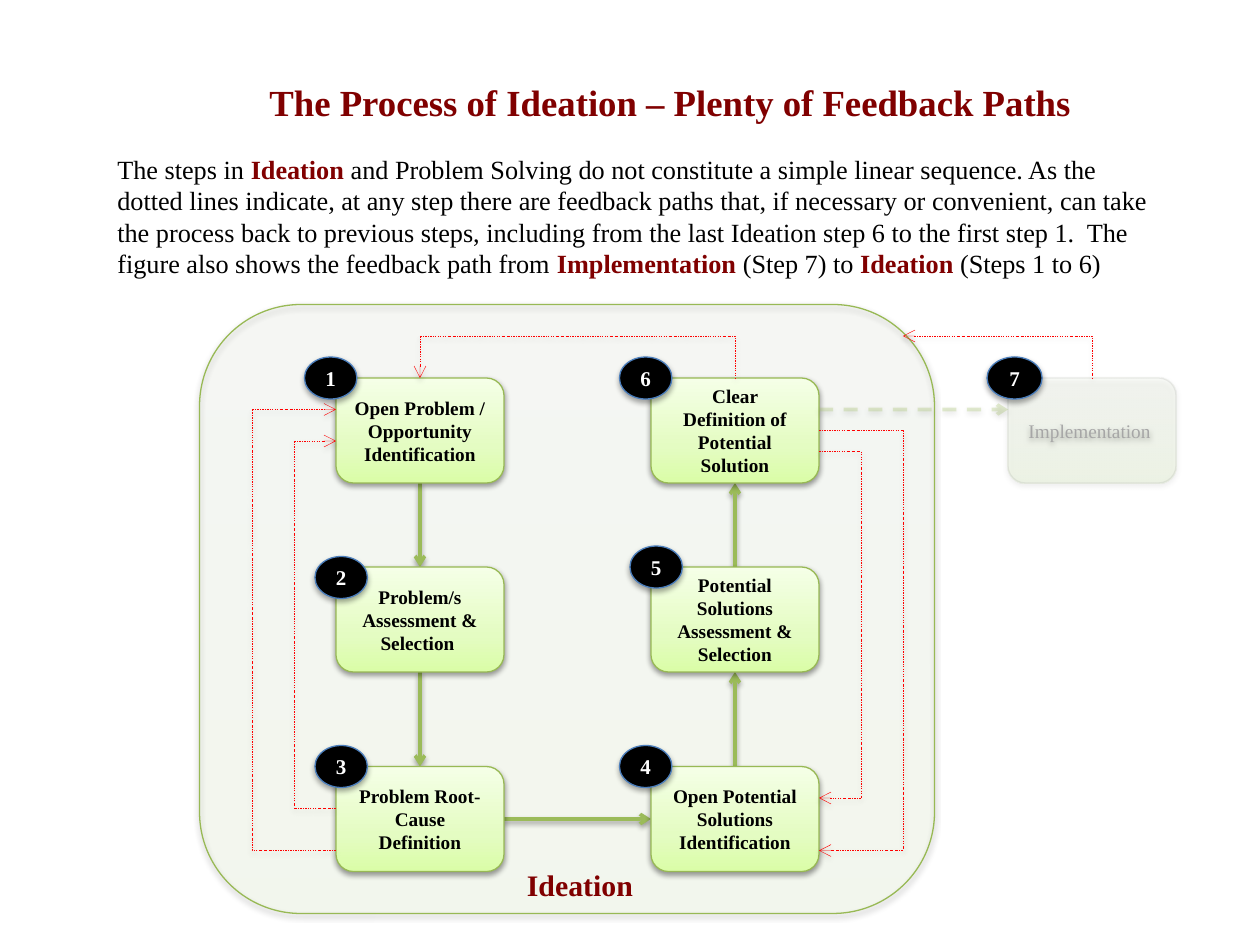
from collections import namedtuple

from lxml import etree
from pptx import Presentation
from pptx.dml.color import RGBColor
from pptx.enum.dml import MSO_LINE
from pptx.enum.shapes import MSO_CONNECTOR, MSO_SHAPE
from pptx.enum.text import MSO_ANCHOR, PP_ALIGN
from pptx.oxml import parse_xml
from pptx.oxml.ns import nsdecls, qn
from pptx.util import Cm, Pt

ROUNDED, OVAL = MSO_SHAPE.ROUNDED_RECTANGLE, MSO_SHAPE.OVAL
STRAIGHT, ELBOW = MSO_CONNECTOR.STRAIGHT, MSO_CONNECTOR.ELBOW
DASH, DASH_DOT = MSO_LINE.DASH, MSO_LINE.DASH_DOT
CENTER, LEFT = PP_ALIGN.CENTER, PP_ALIGN.LEFT

BLACK = RGBColor(0x00, 0x00, 0x00)
WHITE = RGBColor(0xFF, 0xFF, 0xFF)
MAROON = RGBColor(0x80, 0x00, 0x00)
RED = RGBColor(0xFF, 0x00, 0x00)
GREEN = RGBColor(0x9B, 0xBB, 0x59)
GREEN_EDGE = RGBColor(0x98, 0xB9, 0x55)
BLUE_EDGE = RGBColor(0x4B, 0x7E, 0xBC)
GRAY_EDGE = RGBColor(0x80, 0x80, 0x80)
GRAY_TEXT = RGBColor(0xA6, 0xA6, 0xA6)
GRADIENT = [(0, RGBColor(0xDA, 0xFD, 0xA7)),
            (35, RGBColor(0xE4, 0xFC, 0xC2)),
            (100, RGBColor(0xF5, 0xFF, 0xE7))]

FONT = "Times New Roman"
CELL = 2.54 / 12  # the layout grid, twelve cells to the inch
Box = namedtuple("Box", "left top width height")
STEP_WIDTH, STEP_HEIGHT = 16, 10

# Number, text, place in the Ideation box, offset of the badge
STEPS = [
    ("1", "Open Problem / Opportunity Identification", (13, 7), (-3, -2)),
    ("2", "Problem/s Assessment & Selection ", (13, 25), (-2, -1)),
    ("3", "Problem Root-Cause Definition", (13, 44), (-2, -2)),
    ("4", "Open Potential Solutions Identification", (43, 44), (-3, -2)),
    ("5", "Potential Solutions Assessment & Selection", (43, 25), (-2, -2)),
    ("6", "Clear Definition of Potential Solution", (43, 7), (-3, -2)),
]
FORWARD = [((21, 17), (21, 25)), ((21, 35), (21, 44)), ((29, 49), (43, 49)),
           ((51, 44), (51, 35)), ((51, 25), (51, 17))]
# Start and end of the bent part, then start and tip of the arrow
FEEDBACK = [((13, 52), (5, 10), (5, 10), (13, 10)),
            ((13, 48), (9, 13), (9, 13), (13, 13)),
            ((59, 12), (67, 52), (67, 52), (59, 52)),
            ((59, 14), (63, 47), (63, 47), (59, 47)),
            ((21, 3), (51, 7), (21, 3), (21, 7))]


def grid(*cells):
    return [Cm(cell * CELL) for cell in cells]


def inside(box, point):
    return box.left + point[0], box.top + point[1]


def add_effects(shape, opacity=38, distance=20000):
    shape._element.spPr.append(parse_xml(
        f'<a:effectLst {nsdecls("a")}><a:outerShdw blurRad="40000" dist="{distance}" '
        'dir="5400000" rotWithShape="0"><a:srgbClr val="000000">'
        f'<a:alpha val="{opacity * 1000}"/></a:srgbClr></a:outerShdw></a:effectLst>'))


def set_line(shape, color, width, dash=None, opacity=100):
    shape.line.color.rgb = color
    shape.line.width = Pt(width)
    if dash:
        shape.line.dash_style = dash
    if opacity < 100:
        color_element = shape._element.spPr.find(".//" + qn("a:ln")).find(".//" + qn("a:srgbClr"))
        etree.SubElement(color_element, qn("a:alpha"), val=str(opacity * 1000))


def set_gradient(shape, opacity):
    stops = "".join(
        f'<a:gs pos="{position * 1000}"><a:srgbClr val="{color}">'
        f'<a:alpha val="{opacity * 1000}"/></a:srgbClr></a:gs>' for position, color in GRADIENT)
    shape._element.spPr.find(qn("a:prstGeom")).addnext(parse_xml(
        f'<a:gradFill {nsdecls("a")} rotWithShape="1"><a:gsLst>{stops}</a:gsLst>'
        '<a:lin ang="16200000" scaled="0"/></a:gradFill>'))


def add_run(paragraph, text, size, color, bold):
    run = paragraph.add_run()
    run.text = text
    run.font.name = FONT
    run.font.size = Pt(size)
    run.font.bold = bold
    run.font.color.rgb = color


def write_centered(shape, text, size, color, bold=True):
    frame = shape.text_frame
    frame.word_wrap = True
    frame.vertical_anchor = MSO_ANCHOR.MIDDLE
    frame.paragraphs[0].alignment = CENTER
    add_run(frame.paragraphs[0], text, size, color, bold)


def add_panel(slide, box, edge=GREEN_EDGE, fill_opacity=100, edge_opacity=100):
    panel = slide.shapes.add_shape(ROUNDED, *grid(*box))
    set_gradient(panel, fill_opacity)
    set_line(panel, edge, 0.75, opacity=edge_opacity)
    add_effects(panel)
    return panel


def add_badge(slide, number, point, width=5):
    badge = slide.shapes.add_shape(OVAL, *grid(*point, width, 4))
    badge.fill.solid()
    badge.fill.fore_color.rgb = BLACK
    set_line(badge, BLUE_EDGE, 0.75)
    add_effects(badge, 35, 23000)
    write_centered(badge, number, 12, WHITE)


def add_path(slide, start, end, color, width, dash=None, opacity=100, arrow=True, bent=False):
    """A bent path leaves its start sideways and reaches its end upright."""
    path = slide.shapes.add_connector(ELBOW if bent else STRAIGHT, *grid(*start, *end))
    properties = path._element.spPr
    if bent:
        properties.find(qn("a:prstGeom")).set("prst", "bentConnector2")
    set_line(path, color, width, dash, opacity)
    if arrow:
        end_name = "a:headEnd" if bent else "a:tailEnd"
        etree.SubElement(properties.find(qn("a:ln")), qn(end_name), type="arrow")
    add_effects(path)


def add_text(slide, box, runs, size, alignment=LEFT, wrap=True):
    text_box = slide.shapes.add_textbox(*grid(*box))
    text_box.text_frame.word_wrap = wrap
    paragraph = text_box.text_frame.paragraphs[0]
    paragraph.alignment = alignment
    for text, strong in runs:
        add_run(paragraph, text, size, MAROON if strong else BLACK, strong)
    return text_box


def draw_heading(slide, box):
    title = add_text(slide, Box(box.left + 6, box.top, 100, 5.4),
                     [("The Process of Ideation – Plenty of Feedback Paths", True)], 21, CENTER)
    title.text_frame.margin_right = Cm(1.17)
    add_text(slide, Box(box.left, box.top + 7, 102, 13.3), [
        ("The steps in ", False), ("Ideation ", True),
        ("and Problem Solving do not constitute a simple linear sequence. As the dotted lines "
         "indicate, at any step there are feedback paths that, if necessary or convenient, can "
         "take the process back to previous steps, including from the last Ideation step 6 to "
         "the first step 1.  The figure also shows the feedback path from ", False),
        ("Implementation ", True), ("(Step 7) to ", False),
        ("Ideation ", True), ("(Steps 1 to 6)", False)], 15)


def draw_ideation(slide, box):
    add_panel(slide, box, fill_opacity=10)
    for start, end in FORWARD:
        add_path(slide, inside(box, start), inside(box, end), GREEN, 2)
    for _, text, place, _ in STEPS:
        step = add_panel(slide, Box(*inside(box, place), STEP_WIDTH, STEP_HEIGHT))
        write_centered(step, text, 11, BLACK)
    # Feedback loops
    for loop in FEEDBACK:
        start, end, tail, tip = [inside(box, point) for point in loop]
        add_path(slide, start, end, RED, 0.25, DASH_DOT, arrow=False, bent=True)
        add_path(slide, tail, tip, RED, 0.25, DASH_DOT)
    for number, _, place, offset in STEPS:
        add_badge(slide, number, inside(Box(*inside(box, place), 0, 0), offset))
    add_text(slide, Box(*inside(box, (30, 53)), 12.6, 4.7), [("Ideation", True)], 17, wrap=False)


def draw_implementation(slide, box):
    panel = add_panel(slide, box, GRAY_EDGE, 16, 15)
    write_centered(panel, "Implementation ", 11, GRAY_TEXT, False)
    # Way in from step 6 and feedback to Ideation
    add_path(slide, inside(box, (-18, 3)), inside(box, (0, 3)), GREEN, 2, DASH, 28)
    add_path(slide, inside(box, (-10, -4)), inside(box, (8, 0)), RED, 0.25, DASH_DOT, bent=True)
    add_badge(slide, "7", inside(box, (-2, -2)), 5.25)


def main():
    presentation = Presentation()
    presentation.slide_width, presentation.slide_height = Cm(25.4), Cm(19.05)
    slide = presentation.slides.add_slide(presentation.slide_layouts[6])
    draw_ideation(slide, Box(19, 29, 70, 58))
    draw_implementation(slide, Box(96, 36, STEP_WIDTH, STEP_HEIGHT))
    draw_heading(slide, Box(10, 7, 106, 20))
    presentation.save("out.pptx")


if __name__ == "__main__":
    main()
